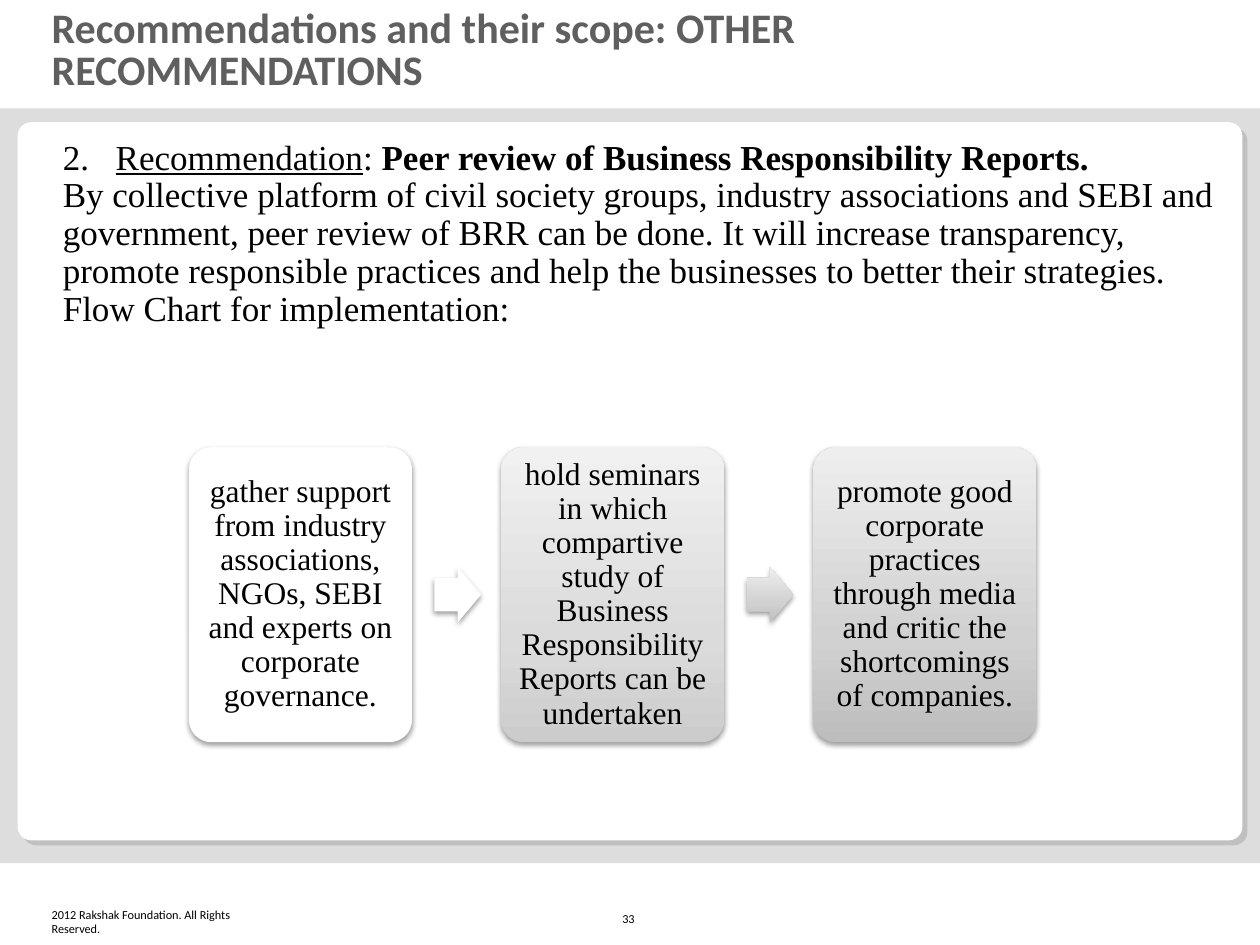
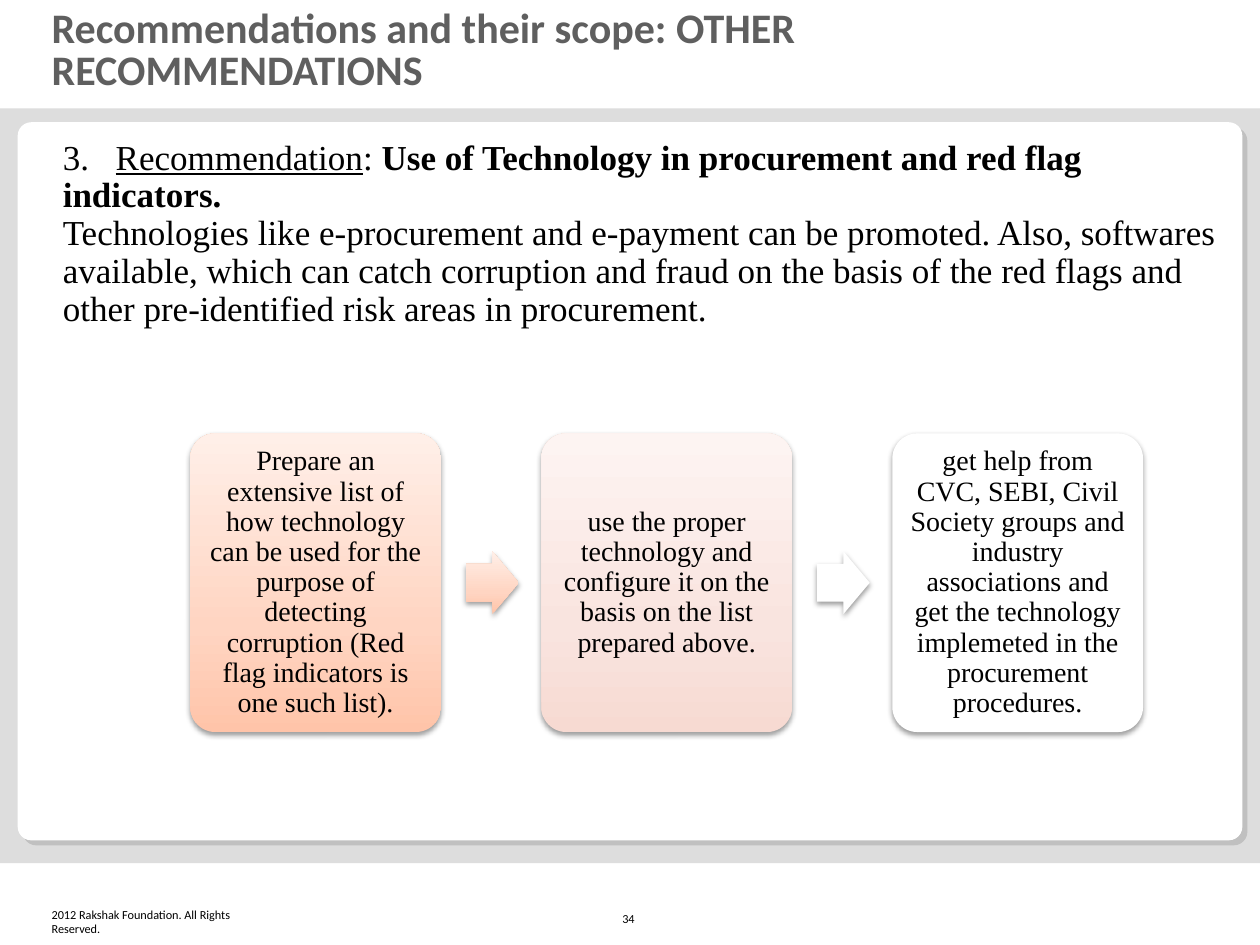
from lxml.etree import SubElement
from pptx import Presentation
from pptx.dml.color import RGBColor
from pptx.enum.shapes import MSO_SHAPE
from pptx.enum.text import MSO_ANCHOR, MSO_AUTO_SIZE, PP_ALIGN
from pptx.oxml.ns import qn
from pptx.util import Inches, Pt

COLORS = {
    "white": "FFFFFF",
    "black": "000000",
    "band": "DDDDDD",
    "panel_edge": "C0C0C0",
    "title": "5F5F5F",
}
GRADIENTS = {
    "light_grey": ("CCCCCC", "DBDBDB", "F1F1F1"),
    "grey": ("BDBDBD", "D1D1D1", "EEEEEE"),
    "peach": ("FFC4A9", "FFD5C2", "FFEFE8"),
    "rose": ("F7DAD2", "F9E4DF", "FDF4F2"),
}
GRADIENT_STOPS = (0, 35, 100)
HEADING_FONT = "Calibri"
BODY_FONT = "Times New Roman"
TITLE = "Recommendations and their scope: OTHER RECOMMENDATIONS"
FOOTER = "2012 Rakshak Foundation. All Rights Reserved."

SLIDES = [
    {
        "number": 33,
        "marker": "2.",
        "heading": "Peer review of Business Responsibility Reports.",
        "body": [
            "By collective platform of civil society groups, industry associations and SEBI and "
            "government, peer review of BRR can be done. It will increase transparency, promote "
            "responsible practices and help the businesses to better their strategies.",
            "Flow Chart for implementation:",
        ],
        "flow": {
            "left": 1.5, "top": 3.55, "width": 1.77, "height": 2.34, "size": 18,
            "steps": [
                ("gather support from industry associations, NGOs, SEBI and experts on "
                 "corporate governance.", "white"),
                ("hold seminars in which compartive study of Business Responsibility "
                 "Reports can be undertaken", "light_grey"),
                ("promote good corporate practices through media and critic the "
                 "shortcomings of companies.", "grey"),
            ],
            "arrows": ["white", "grey"],
        },
    },
    {
        "number": 34,
        "marker": "3.",
        "heading": "Use of Technology in procurement and red flag indicators.",
        "body": [
            "Technologies like e-procurement and e-payment can be promoted. Also, softwares "
            "available, which can catch corruption and fraud on the basis of the red flags and "
            "other pre-identified risk areas in procurement.",
        ],
        "flow": {
            "left": 1.51, "top": 3.44, "width": 1.99, "height": 2.37, "size": 16,
            "steps": [
                ("Prepare an extensive list of how technology can be used for the purpose of "
                 "detecting corruption (Red flag indicators is one such list).", "peach"),
                ("use the proper technology and configure it on the basis on the list "
                 "prepared above.", "rose"),
                ("get help from CVC, SEBI, Civil Society groups and industry associations and "
                 "get the technology implemeted in the procurement procedures.", "white"),
            ],
            "arrows": ["peach", "white"],
        },
    },
]


def add_span(para, text, size, font=BODY_FONT, color="black", bold=False, underline=False):
    """Add one formatted run to a paragraph."""
    span = para.add_run()
    span.text = text
    span.font.name = font
    span.font.size = Pt(size)
    span.font.bold = bold
    span.font.underline = underline
    span.font.color.rgb = RGBColor.from_string(COLORS[color])


def set_frame(frame, anchor=MSO_ANCHOR.TOP, sides=0.1, ends=0.05):
    """Set wrapping, anchor and margins of a text frame."""
    frame.word_wrap = True
    frame.auto_size = MSO_AUTO_SIZE.NONE
    frame.vertical_anchor = anchor
    frame.margin_left = frame.margin_right = Inches(sides)
    frame.margin_top = frame.margin_bottom = Inches(ends)


def add_box(page, left, top, width, height, **frame_format):
    """Add a wrapping text box and return its text frame."""
    box = page.shapes.add_textbox(Inches(left), Inches(top), Inches(width), Inches(height))
    set_frame(box.text_frame, **frame_format)
    return box.text_frame


def fill_shape(shape, fill):
    """Fill a shape with a solid colour or an upward three-stop gradient."""
    if fill in COLORS:
        shape.fill.solid()
        shape.fill.fore_color.rgb = RGBColor.from_string(COLORS[fill])
        return
    shape.fill.gradient()
    shape.fill.gradient_angle = 90
    stops = shape._element.spPr.find(".//" + qn("a:gsLst"))
    for stop in list(stops):
        stops.remove(stop)
    for position, color in zip(GRADIENT_STOPS, GRADIENTS[fill]):
        stop = SubElement(stops, qn("a:gs"), pos=str(position * 1000))
        SubElement(stop, qn("a:srgbClr"), val=color)


def add_shadow(shape):
    """Give a shape a soft shadow below it."""
    effects = shape._element.spPr.find(qn("a:effectLst"))
    shadow = SubElement(effects, qn("a:outerShdw"), blurRad=str(Pt(3.1)), dist=str(Pt(1.6)),
                        dir="5400000", rotWithShape="0")
    color = SubElement(shadow, qn("a:srgbClr"), val=COLORS["black"])
    SubElement(color, qn("a:alpha"), val="38000")


def add_shape(page, kind, left, top, width, height, fill, adjust=()):
    """Add a filled preset shape without an outline."""
    shape = page.shapes.add_shape(kind, Inches(left), Inches(top), Inches(width), Inches(height))
    shape.shadow.inherit = False
    shape.line.fill.background()
    fill_shape(shape, fill)
    for index, value in enumerate(adjust):
        shape.adjustments[index] = value
    return shape


def add_frame(page, number):
    """Add the band, panel, title, footer and page number."""
    add_shape(page, MSO_SHAPE.RECTANGLE, 0, 0.86, 10, 5.99, "band")
    for left, top, fill in ((0.18, 1.01, "panel_edge"), (0.14, 0.97, "white")):
        add_shape(page, MSO_SHAPE.ROUNDED_RECTANGLE, left, top, 9.72, 5.7, fill, (0.019,))

    title = page.shapes.title
    title.left, title.top = Inches(0.31), Inches(0.19)
    title.width, title.height = Inches(7.94), Inches(0.44)
    set_frame(title.text_frame, anchor=MSO_ANCHOR.MIDDLE)
    para = title.text_frame.paragraphs[0]
    para.alignment = PP_ALIGN.LEFT
    para.line_spacing = 0.85
    add_span(para, TITLE, 24, font=HEADING_FONT, color="title", bold=True)

    footer = add_box(page, 0.41, 7.19, 1.65, 0.24, anchor=MSO_ANCHOR.BOTTOM, sides=0, ends=0)
    add_span(footer.paragraphs[0], FOOTER, 7, font=HEADING_FONT)
    counter = add_box(page, 4.84, 7.06, 0.32, 0.34, anchor=MSO_ANCHOR.BOTTOM)
    add_span(counter.paragraphs[0], str(number), 7, font=HEADING_FONT)


def add_recommendation(page, marker, heading, body):
    """Add the numbered recommendation and its explanation."""
    frame = add_box(page, 0.4, 1.06, 9.39, 1.92)
    para = frame.paragraphs[0]
    para.line_spacing = 0.9
    tabs = SubElement(para._p.get_or_add_pPr(), qn("a:tabLst"))
    SubElement(tabs, qn("a:tab"), pos=str(Inches(0.42)), algn="l")
    add_span(para, marker + "\t", 20)
    add_span(para, "Recommendation", 20, underline=True)
    add_span(para, ": ", 20)
    add_span(para, heading, 20, bold=True)
    for text in body:
        para = frame.add_paragraph()
        para.line_spacing = 0.9
        add_span(para, text, 20)


def add_flow(page, left, top, width, height, size, steps, arrows):
    """Add a row of steps joined by block arrows."""
    pitch = 1.4 * width
    for index, (text, fill) in enumerate(steps):
        step = add_shape(page, MSO_SHAPE.ROUNDED_RECTANGLE, left + index * pitch, top,
                         width, height, fill, (0.1,))
        add_shadow(step)
        set_frame(step.text_frame, anchor=MSO_ANCHOR.MIDDLE, sides=0.07, ends=0.07)
        para = step.text_frame.paragraphs[0]
        para.alignment = PP_ALIGN.CENTER
        para.line_spacing = 0.9
        add_span(para, text, size)

    arrow_width, arrow_height = 0.21 * width, 0.25 * width
    for index, fill in enumerate(arrows):
        arrow = add_shape(page, MSO_SHAPE.RIGHT_ARROW, left + index * pitch + 1.1 * width,
                          top + (height - arrow_height) / 2, arrow_width, arrow_height,
                          fill, (0.6, 0.5))
        add_shadow(arrow)


def main():
    """Build the deck and save it."""
    deck = Presentation()
    deck.slide_width, deck.slide_height = Inches(10), Inches(7.5)
    for content in SLIDES:
        page = deck.slides.add_slide(deck.slide_layouts[5])
        add_frame(page, content["number"])
        add_recommendation(page, content["marker"], content["heading"], content["body"])
        add_flow(page, **content["flow"])
    deck.save("out.pptx")


if __name__ == "__main__":
    main()
